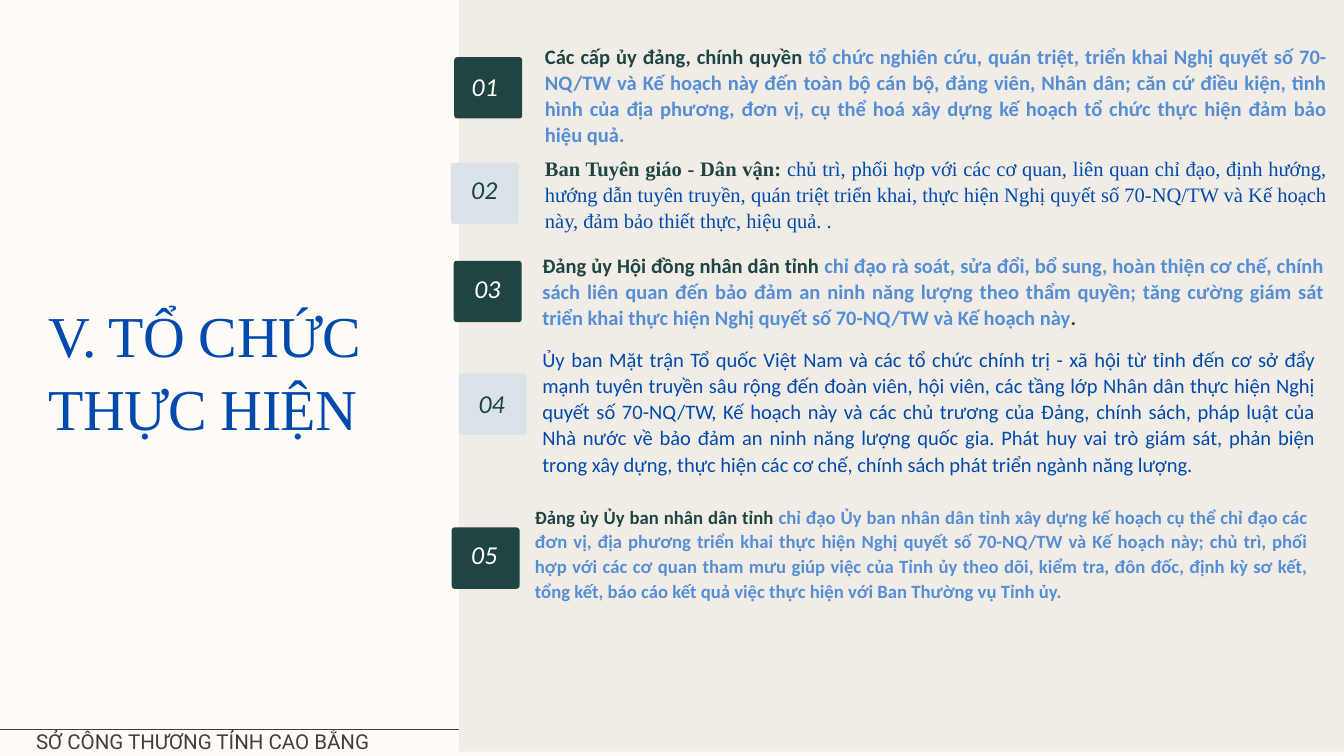
from lxml import etree
from pptx import Presentation
from pptx.dml.color import RGBColor
from pptx.enum.shapes import MSO_CONNECTOR, MSO_SHAPE
from pptx.enum.text import MSO_ANCHOR, MSO_AUTO_SIZE, PP_ALIGN as Align
from pptx.oxml.ns import qn
from pptx.util import Cm, Pt

rgb = RGBColor.from_string
GREEN, BLUE, SKY, GREY, WHITE = "1E4541", "004AAD", "558ED5", "403E3E", "FFFFFF"


def prepare(shape, align, spacing):
    frame = shape.text_frame
    frame.margin_left = frame.margin_right = frame.margin_top = frame.margin_bottom = 0
    frame.word_wrap = True
    frame.auto_size = MSO_AUTO_SIZE.NONE
    frame.vertical_anchor = MSO_ANCHOR.TOP
    paragraph = frame.paragraphs[0]
    paragraph.alignment = align
    paragraph.line_spacing = Pt(spacing)
    return paragraph


def write(paragraph, text, size=22, color=GREEN, font="Calibri", bold=False, italic=False, tracking=0):
    run = paragraph.add_run()
    run.text = text
    run.font.size = Pt(size)
    run.font.name = font
    run.font.bold = bold
    run.font.italic = italic
    run.font.color.rgb = rgb(color)
    if tracking:
        run._r.get_or_add_rPr().set("spc", str(tracking))


prs = Presentation()
prs.slide_width, prs.slide_height = Cm(50.8), Cm(28.58)
slide = prs.slides.add_slide(prs.slide_layouts[5])
slide.background.fill.solid()
slide.background.fill.fore_color.rgb = rgb("FFFCF8")
shapes = slide.shapes

heading = shapes.title
heading.left, heading.top, heading.width, heading.height = Cm(1.83), Cm(11.2), Cm(12.93), Cm(5.51)
write(prepare(heading, Align.LEFT, 78), "V. TỔ CHỨC THỰC HIỆN",
      size=62, color=BLUE, font="Times New Roman", tracking=-60)

footer_rule = shapes.add_connector(MSO_CONNECTOR.STRAIGHT, 0, Cm(27.56), Cm(50.8), Cm(27.56))
footer_rule.line.color.rgb = rgb(GREY)
footer_rule.line.width = Pt(0.75)
etree.SubElement(footer_rule._element.spPr, qn("a:effectLst"))

panel = shapes.add_shape(MSO_SHAPE.RECTANGLE, Cm(17.35), Cm(-0.18), Cm(34.09), Cm(28.6))
panel.shadow.inherit = False
panel.fill.solid()
panel.fill.fore_color.rgb = rgb("F1ECE6")
panel.line.fill.background()

footer = shapes.add_textbox(0, Cm(27.41), Cm(15.32), Cm(1.09))
write(prepare(footer, Align.CENTER, 30.8), "SỞ CÔNG THƯƠNG TỈNH CAO BẰNG", color=GREY, font="Roboto")

lead = dict(bold=True)
detail = dict(bold=True, color=SKY)
tasks = [
    dict(tile=(17.17, 2.16), number=(16.71, 2.77), area=(20.6, 1.6, 29.54, 3.99), spacing=28, runs=[
        ("Các cấp ủy đảng, chính quyền ", lead),
        ("tổ chức nghiên cứu, quán triệt, triển khai Nghị quyết số 70-NQ/TW và Kế hoạch này đến "
         "toàn bộ cán bộ, đảng viên, Nhân dân; căn cứ điều kiện, tình hình của địa phương, đơn vị, "
         "cụ thể hoá xây dựng kế hoạch tổ chức thực hiện đảm bảo hiệu quả.", detail)]),
    dict(tile=(17.04, 6.15), number=(16.69, 6.65), area=(20.6, 5.84, 29.54, 3), spacing=28, runs=[
        ("Ban Tuyên giáo - Dân vận: ", dict(bold=True, font="Times New Roman")),
        ("chủ trì, phối hợp với các cơ quan, liên quan chỉ đạo, định hướng, hướng dẫn tuyên truyền, "
         "quán triệt triển khai, thực hiện Nghị quyết số 70-NQ/TW và Kế hoạch này, đảm bảo thiết thực, "
         "hiệu quả. .", dict(color=BLUE, font="Times New Roman"))]),
    dict(tile=(17.15, 9.86), number=(16.81, 10.39), area=(20.5, 9.5, 29.54, 3), spacing=28, runs=[
        ("Đảng ủy Hội đồng nhân dân tỉnh ", lead),
        ("chỉ đạo rà soát, sửa đổi, bổ sung, hoàn thiện cơ chế, chính sách liên quan đến bảo đảm "
         "an ninh năng lượng theo thẩm quyền; tăng cường giám sát triển khai thực hiện Nghị quyết "
         "số 70-NQ/TW và Kế hoạch này", detail),
        (".", lead)]),
    dict(tile=(17.35, 14.12), number=(16.97, 14.73), area=(20.5, 13.06, 29.21, 4.98), spacing=28, runs=[
        ("Ủy ban Mặt trận Tổ quốc Việt Nam và các tổ chức chính trị - xã hội từ tỉnh đến cơ sở "
         "đẩy mạnh tuyên truyền sâu rộng đến đoàn viên, hội viên, các tầng lớp Nhân dân thực hiện "
         "Nghị quyết số 70-NQ/TW, Kế hoạch này và các chủ trương của Đảng, chính sách, pháp luật của "
         "Nhà nước về bảo đảm an ninh năng lượng quốc gia. Phát huy vai trò giám sát, phản biện trong "
         "xây dựng, thực hiện các cơ chế, chính sách phát triển ngành năng lượng.", dict(color=BLUE))]),
    dict(tile=(17.07, 19.94), number=(16.69, 20.45), area=(20.22, 19.02, 29.21, 3.84), spacing=26.6, runs=[
        ("Đảng ủy Ủy ban nhân dân tỉnh ", dict(lead, size=20)),
        ("chỉ đạo Ủy ban nhân dân tỉnh xây dựng kế hoạch cụ thể chỉ đạo các đơn vị, địa phương "
         "triển khai thực hiện Nghị quyết số 70-NQ/TW và Kế hoạch này; chủ trì, phối hợp với các "
         "cơ quan tham mưu giúp việc của Tỉnh ủy theo dõi, kiểm tra, đôn đốc, định kỳ sơ kết, tổng kết, "
         "báo cáo kết quả việc thực hiện với Ban Thường vụ Tỉnh ủy.", dict(detail, size=20))]),
]

for order, task in enumerate(tasks, start=1):
    tile_color, number_color = (GREEN, WHITE) if order % 2 else ("DAE3E7", GREEN)

    duty = shapes.add_textbox(*map(Cm, task["area"]))
    duty_paragraph = prepare(duty, Align.JUSTIFY, task["spacing"])
    for text, style in task["runs"]:
        write(duty_paragraph, text, **style)

    tile = shapes.add_shape(MSO_SHAPE.ROUNDED_RECTANGLE, *map(Cm, task["tile"]), Cm(2.57), Cm(2.32))
    tile.adjustments[0] = 0.05
    tile.shadow.inherit = False
    tile.fill.solid()
    tile.fill.fore_color.rgb = rgb(tile_color)
    tile.line.fill.background()

    number = shapes.add_textbox(*map(Cm, task["number"]), Cm(3.23), Cm(1.12))
    write(prepare(number, Align.CENTER, 30.6), f"{order:02}", size=27.6, color=number_color, italic=True)

prs.save("out.pptx")
